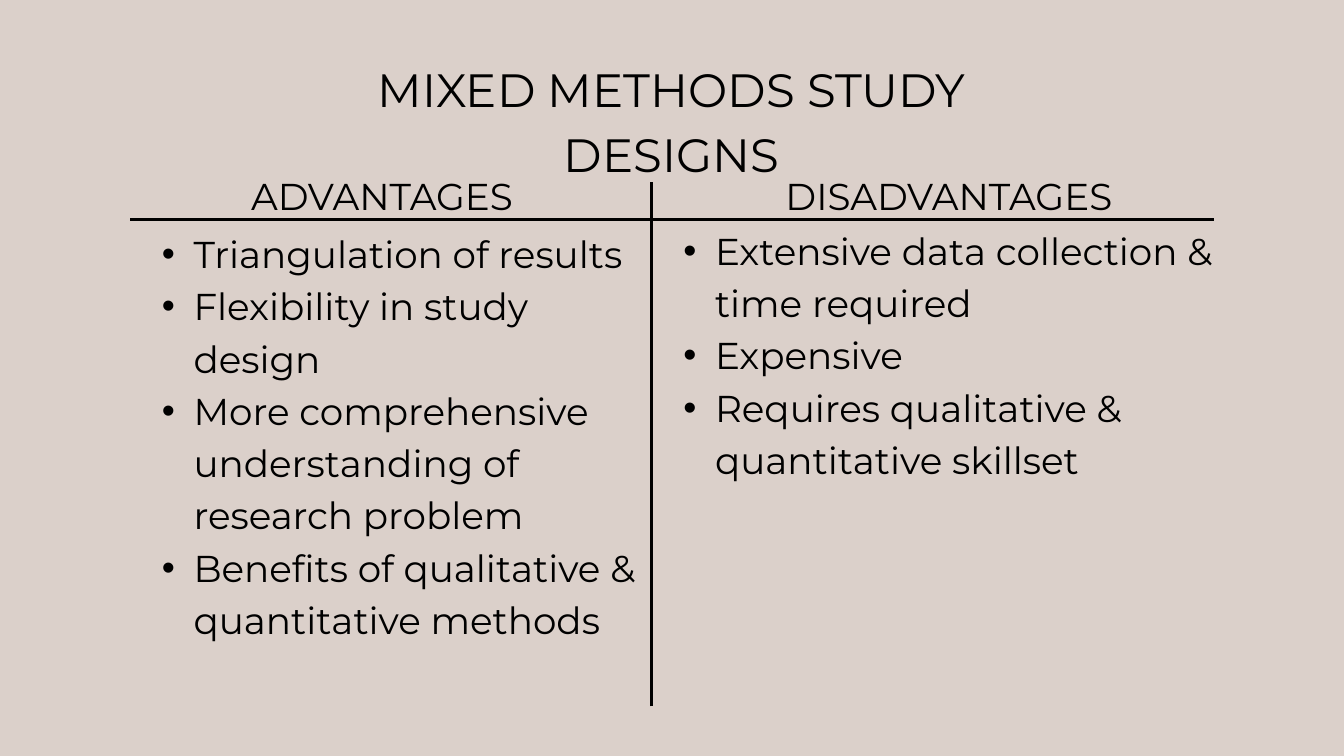
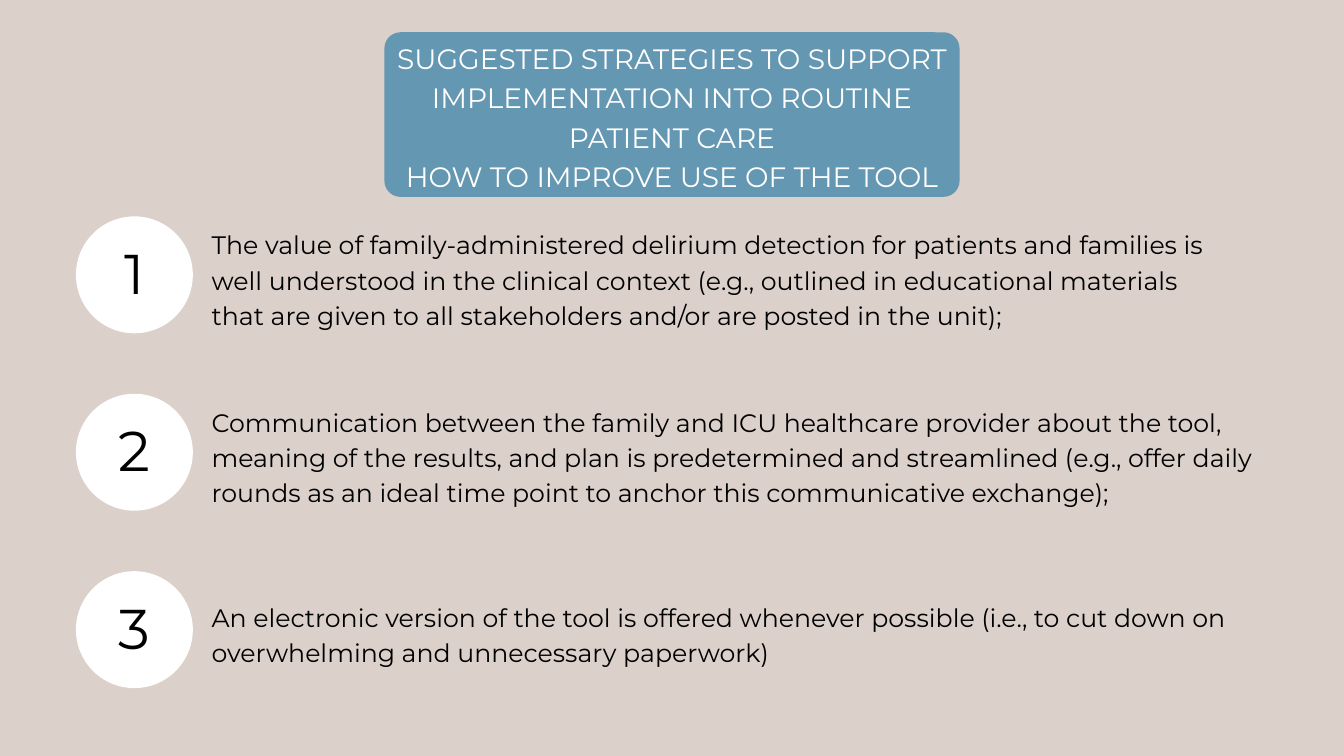
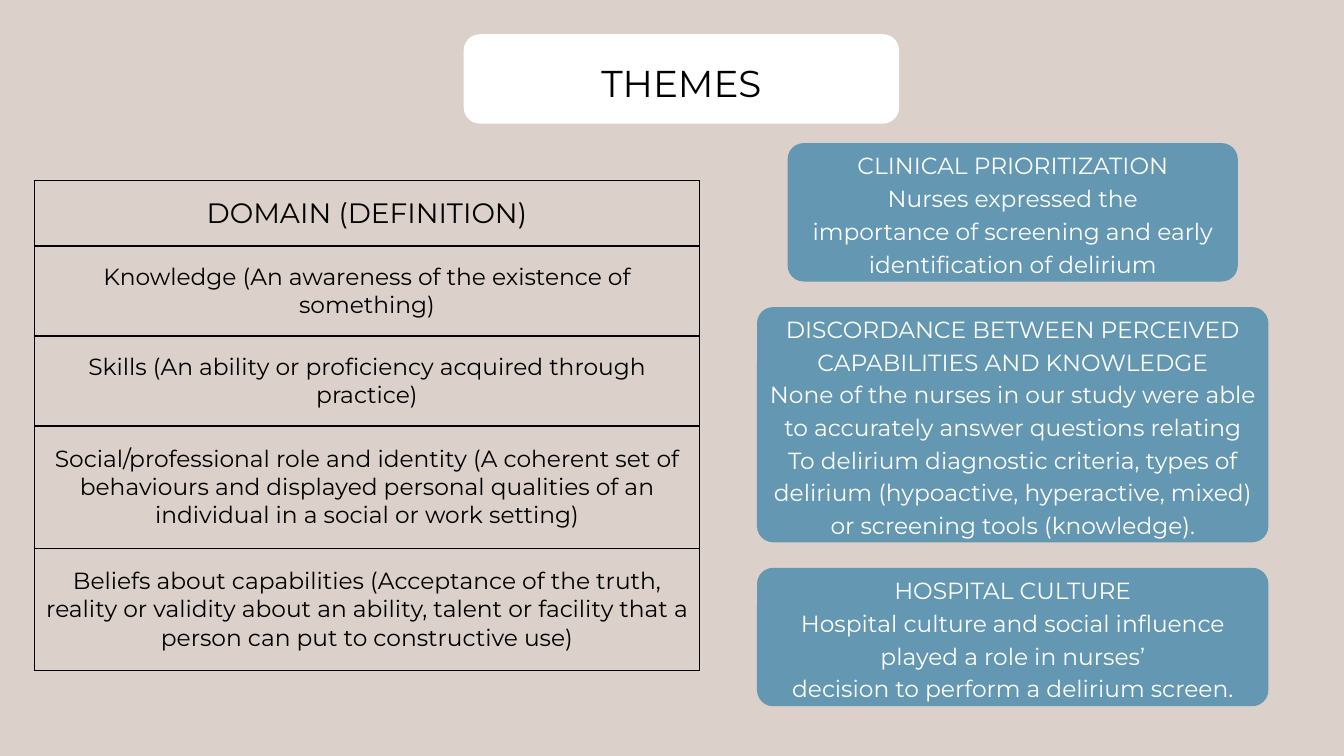
from lxml import etree
from pptx import Presentation
from pptx.dml.color import RGBColor
from pptx.enum.shapes import MSO_CONNECTOR as Connector, MSO_SHAPE as Preset
from pptx.enum.text import MSO_ANCHOR as Anchor, MSO_AUTO_SIZE as AutoSize, PP_ALIGN as Align
from pptx.oxml.ns import qn
from pptx.util import Inches, Pt

FONT = "Montserrat"
SAND, BLUE, WHITE, BLACK = "DBD0CA", "6497B1", "FFFFFF", "000000"
COMPARISON, TITLE_ONLY = 4, 5
LEADING = 1.4
RADIUS = 0.24

COLUMNS = [
    ("ADVANTAGES", (3.72, 2.46, 3.93, 0.74), (1.94, 3.33, 7.75, 6.91), [
        "Triangulation of results",
        "Flexibility in study design",
        "More comprehensive understanding of research problem",
        "Benefits of qualitative & quantitative methods"]),
    ("DISADVANTAGES", (11.68, 2.46, 4.88, 0.74), (9.7, 3.28, 8.36, 3.83), [
        "Extensive data collection & time required",
        "Expensive",
        "Requires qualitative & quantitative skillset"]),
]
STRATEGIES = [
    (14.87, ["The value of family-administered delirium detection for patients and families is "
             "well understood in the clinical context (e.g., outlined in educational materials "
             "that are given to all stakeholders and/or are posted in the unit);"]),
    (16.03, ["Communication between the family and ICU healthcare provider about the tool,",
             "meaning of the results, and plan is predetermined and streamlined (e.g., offer daily "
             "rounds as an ideal time point to anchor this communicative exchange);"]),
    (15.13, ["An electronic version of the tool is offered whenever possible (i.e., to cut down on "
             "overwhelming and unnecessary paperwork)"]),
]
DOMAINS = [
    (0.97, "DOMAIN (DEFINITION)"),
    (1.34, "Knowledge (An awareness of the existence of something)"),
    (1.34, "Skills (An ability or proficiency acquired through practice)"),
    (1.82, "Social/professional role and identity (A coherent set of behaviours and displayed "
           "personal qualities of an individual in a social or work setting)"),
    (1.82, "Beliefs about capabilities (Acceptance of the truth, reality or validity about an "
           "ability, talent or facility that a person can put to constructive use)"),
]
THEMES = [
    (6.7, 2.06, ["CLINICAL PRIORITIZATION", "Nurses expressed the",
                 "importance of screening and early identification of delirium"]),
    (7.61, 3.5, ["DISCORDANCE BETWEEN PERCEIVED", "CAPABILITIES AND KNOWLEDGE",
                 "None of the nurses in our study were able to accurately answer questions relating",
                 "To delirium diagnostic criteria, types of delirium (hypoactive, hyperactive, "
                 "mixed) or screening tools (knowledge)."]),
    (7.61, 2.06, ["HOSPITAL CULTURE",
                  "Hospital culture and social influence played a role in nurses’",
                  "decision to perform a delirium screen."]),
]


def color(value):
    """Turn a hex string into a colour."""
    return RGBColor.from_string(value)


def place(shape, box):
    """Move a shape to a box of left, top, width, height in inches."""
    shape.left, shape.top, shape.width, shape.height = map(Inches, box)


def add_bullet(para):
    """Give a paragraph a hanging round bullet."""
    props = para._p.get_or_add_pPr()
    props.set("marL", str(Inches(0.94)))
    props.set("indent", str(-Inches(0.47)))
    etree.SubElement(props, qn("a:buChar")).set("char", "•")


def style(para, size, ink=BLACK, align=Align.CENTER):
    """Set the font, colour and alignment of a paragraph."""
    para.alignment = align
    font = para.font
    font.name, font.size, font.bold = FONT, Pt(size), False
    font.color.rgb = color(ink)


def write(shape, lines, size, ink=BLACK, align=Align.CENTER, anchor=Anchor.TOP,
          inset=0, bullets=False):
    """Fill a shape with evenly set paragraphs."""
    frame = shape.text_frame
    frame.text = "\n".join(lines)
    frame.word_wrap, frame.auto_size = True, AutoSize.NONE
    frame.vertical_anchor = anchor
    frame.margin_left = frame.margin_right = Inches(inset)
    frame.margin_top = frame.margin_bottom = Inches(inset)
    for para in frame.paragraphs:
        if bullets:
            add_bullet(para)
        para.line_spacing = Pt(size * LEADING)
        para.space_before = Pt(0)
        style(para, size, ink, align)


def add_solid(page, preset, box, fill):
    """Add a flat preset shape without outline."""
    shape = page.shapes.add_shape(preset, *map(Inches, box))
    shape.shadow.inherit = False
    shape.fill.solid()
    shape.fill.fore_color.rgb = color(fill)
    shape.line.fill.background()
    return shape


def add_panel(page, box, fill):
    """Add a rounded panel with the shared corner radius."""
    panel = add_solid(page, Preset.ROUNDED_RECTANGLE, box, fill)
    panel.adjustments[0] = RADIUS / min(box[2:])
    return panel


def add_panel_title(page, box, lines, size, fill, ink):
    """Set the slide title on a rounded panel."""
    title = page.shapes.title
    title._element.addprevious(add_panel(page, box, fill)._element)
    place(title, box)
    write(title, lines, size, ink, anchor=Anchor.MIDDLE, inset=0.06)


def add_rule(page, x1, y1, x2, y2):
    """Draw a plain black line."""
    rule = page.shapes.add_connector(Connector.STRAIGHT, *map(Inches, (x1, y1, x2, y2)))
    rule.line.color.rgb, rule.line.width = color(BLACK), Pt(3)
    etree.SubElement(rule._element.spPr, qn("a:effectLst"))


def add_step(page, box, number, width, lines):
    """Add a numbered disc with its text on the right."""
    left, top, size, _ = box
    disc = add_solid(page, Preset.OVAL, box, WHITE)
    write(disc, [str(number)], 60, anchor=Anchor.MIDDLE)
    disc.text_frame.margin_bottom = Inches(0.25)
    text = page.shapes.add_textbox(*map(Inches, (left + 2.02, top + 0.04, width, size)))
    write(text, lines, 27, align=Align.LEFT, anchor=Anchor.MIDDLE)


def add_borders(cell):
    """Draw the four black borders of a cell."""
    props = cell._tc.get_or_add_tcPr()
    for index, side in enumerate(("lnL", "lnR", "lnT", "lnB")):
        line = etree.Element(qn(f"a:{side}"), w=str(Pt(1.5)))
        fill = etree.SubElement(line, qn("a:solidFill"))
        etree.SubElement(fill, qn("a:srgbClr")).set("val", BLACK)
        props.insert(index, line)


def add_domain_table(page, box):
    """Add the one-column table of domains."""
    table = page.shapes.add_table(len(DOMAINS), 1, *map(Inches, box)).table
    table.first_row = table.horz_banding = False
    for index, (height, text) in enumerate(DOMAINS):
        table.rows[index].height = Inches(height)
        cell = table.cell(index, 0)
        cell.text, cell.vertical_anchor = text, Anchor.MIDDLE
        cell.fill.background()
        add_borders(cell)
        style(cell.text_frame.paragraphs[0], 25 if index else 30)


def add_theme_cards(page, center, top, gap):
    """Stack the theme cards around a centre line."""
    for width, height, lines in THEMES:
        card = add_panel(page, (center - width / 2, top, width, height), BLUE)
        write(card, lines, 25, WHITE, anchor=Anchor.MIDDLE)
        top += height + gap


def add_comparison_slide(deck):
    """Build the slide of advantages and disadvantages."""
    page = deck.slides.add_slide(deck.slide_layouts[COMPARISON])
    title, *bodies = page.placeholders
    place(title, (3.98, 0.76, 12.03, 0.93))
    write(title, ["MIXED METHODS STUDY DESIGNS"], 50)
    for column, heading, body in zip(COLUMNS, bodies[::2], bodies[1::2]):
        name, heading_box, body_box, items = column
        place(heading, heading_box)
        write(heading, [name], 40)
        place(body, body_box)
        write(body, items, 40, align=Align.LEFT, bullets=True)
    add_rule(page, 1.94, 3.27, 18.06, 3.27)
    add_rule(page, 9.7, 10.51, 9.7, 2.71)


def add_strategy_slide(deck):
    """Build the slide of numbered strategies."""
    page = deck.slides.add_slide(deck.slide_layouts[TITLE_ONLY])
    add_panel_title(page, (5.72, 0.48, 8.56, 2.45), [
        "SUGGESTED STRATEGIES TO SUPPORT IMPLEMENTATION INTO ROUTINE PATIENT CARE",
        "HOW TO IMPROVE USE OF THE TOOL"], 30, BLUE, WHITE)
    for index, (width, lines) in enumerate(STRATEGIES):
        add_step(page, (1.13, 3.22 + 2.64 * index, 1.74, 1.74), index + 1, width, lines)


def add_themes_slide(deck):
    """Build the slide of domains and themes."""
    page = deck.slides.add_slide(deck.slide_layouts[TITLE_ONLY])
    add_panel_title(page, (6.9, 0.51, 6.48, 1.33), ["THEMES"], 40, WHITE, BLACK)
    add_theme_cards(page, 15.07, 2.13, 0.38)
    add_domain_table(page, (0.51, 2.69, 9.9, 7.28))


def main():
    """Build and save the deck."""
    deck = Presentation()
    deck.slide_width, deck.slide_height = Inches(20), Inches(11.25)
    background = deck.slide_master.background.fill
    background.solid()
    background.fore_color.rgb = color(SAND)
    add_comparison_slide(deck)
    add_strategy_slide(deck)
    add_themes_slide(deck)
    deck.save("out.pptx")


if __name__ == "__main__":
    main()
